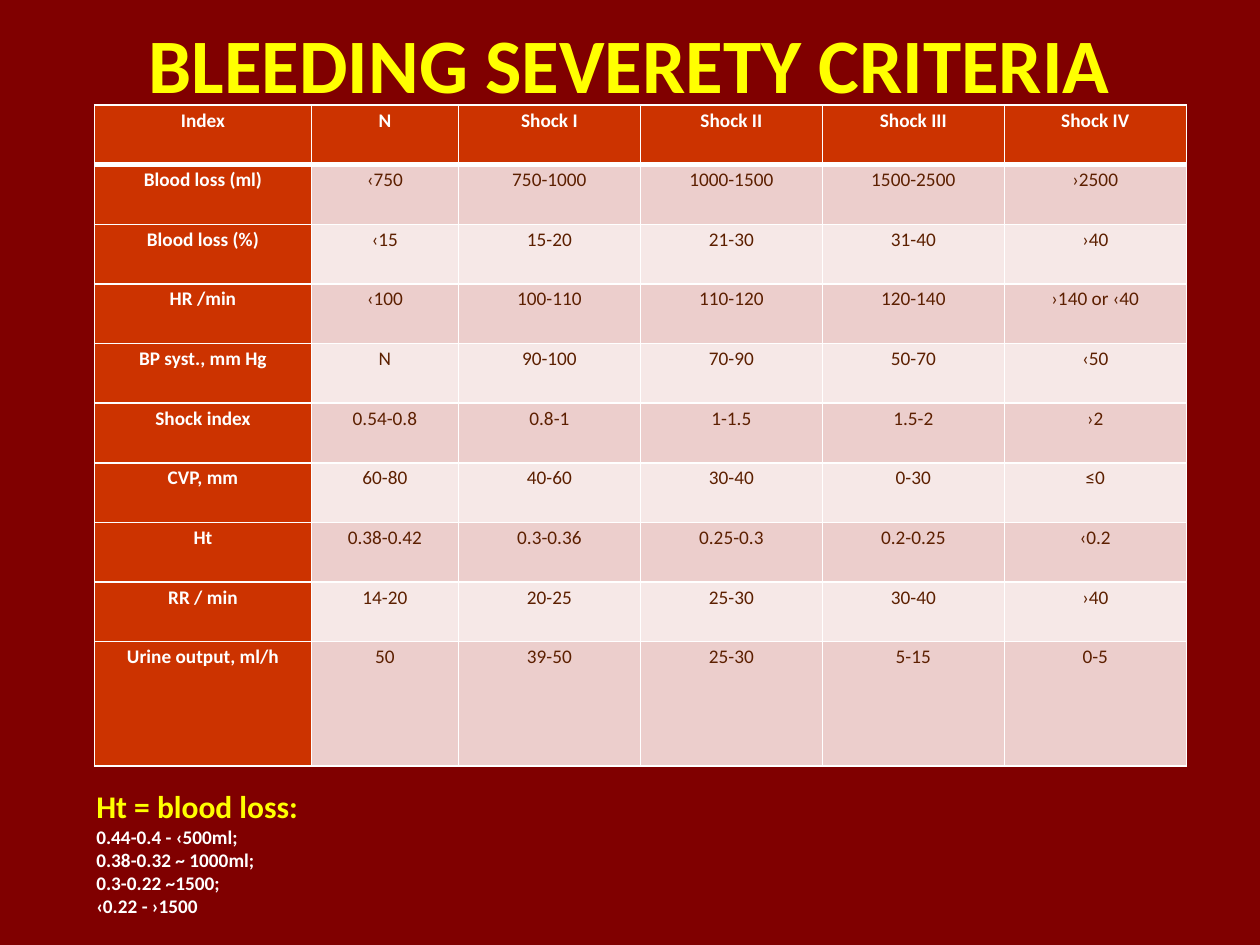
from pptx import Presentation, util as u
from pptx.dml import color
from pptx.enum import text
from pptx.oxml import ns
from lxml import etree

Pt = u.Pt
HEADER = ["Index", "N", "Shock I", "Shock II", "Shock III", "Shock IV"]
CRITERIA = [
    ["Blood loss (ml)", "‹750", "750-1000", "1000-1500", "1500-2500", "›2500"],
    ["Blood loss (%)", "‹15", "15-20", "21-30", "31-40", "›40"],
    ["HR /min", "‹100", "100-110", "110-120", "120-140", "›140 or ‹40"],
    ["BP syst., mm Hg", "N", "90-100", "70-90", "50-70", "‹50"],
    ["Shock index", "0.54-0.8", "0.8-1", "1-1.5", "1.5-2", "›2"],
    ["CVP, mm", "60-80", "40-60", "30-40", "0-30", "≤0"],
    ["Ht", "0.38-0.42", "0.3-0.36", "0.25-0.3", "0.2-0.25", "‹0.2"],
    ["RR / min", "14-20", "20-25", "25-30", "30-40", "›40"],
    ["Urine output, ml/h", "50", "39-50", "25-30", "5-15", "0-5"],
]
COLUMN_WIDTHS = [124, 84] + [104] * 4
ROW_HEIGHTS = [34.1] * 9 + [71]
HEMATOCRIT = ["Ht = blood loss:", "0.44-0.4 - ‹500ml;", "0.38-0.32 ~ 1000ml;",
              "0.3-0.22 ~1500;", "‹0.22 - ›1500"]


def rgb(value):
    return color.RGBColor.from_string(value)


class Painter:
    font = "Calibri"
    background, accent, white = "800000", "FFFF00", "FFFFFF"
    label_fill, ink = "CC3300", "5C1F00"
    bands = ["ECCECC", "F6E8E7"]

    def __init__(self, page):
        self.page = page
        fill = page.background.fill
        fill.solid()
        fill.fore_color.rgb = rgb(self.background)

    def style(self, para, size, ink, bold=True):
        for span in para.runs:
            span.font.name = self.font
            span.font.size = Pt(size)
            span.font.bold = bold
            span.font.color.rgb = rgb(ink)

    def title(self, words, left, top, width, height):
        box = self.page.shapes.title
        box.left, box.top, box.width, box.height = map(Pt, (left, top, width, height))
        frame = box.text_frame
        frame.text = words
        frame.auto_size = text.MSO_AUTO_SIZE.NONE
        # The heading rises above its box, clear of the table
        frame.vertical_anchor = text.MSO_ANCHOR.BOTTOM
        frame.margin_top, frame.margin_bottom = 0, Pt(19)
        frame.paragraphs[0].alignment = text.PP_ALIGN.CENTER
        self.style(frame.paragraphs[0], 44, self.accent)

    def borders(self, cell, top=1, bottom=1):
        properties = cell._tc.get_or_add_tcPr()
        for side, width in (("L", 1), ("R", 1), ("T", top), ("B", bottom)):
            line = etree.SubElement(properties, ns.qn("a:ln" + side), w=str(Pt(width)))
            fill = etree.SubElement(line, ns.qn("a:solidFill"))
            etree.SubElement(fill, ns.qn("a:srgbClr"), val=self.white)

    def cell(self, cell, words, fill, ink, bold):
        cell.margin_left = cell.margin_right = Pt(5)
        cell.margin_top = cell.margin_bottom = 0
        cell.fill.solid()
        cell.fill.fore_color.rgb = rgb(fill)
        cell.text_frame.text = words
        para = cell.text_frame.paragraphs[0]
        para.alignment = text.PP_ALIGN.CENTER
        para.line_spacing = 1.15
        self.style(para, 11, ink, bold)

    def table(self, rows, left, top, widths, heights):
        table = self.page.shapes.add_table(
            len(rows), len(widths), Pt(left), Pt(top),
            Pt(sum(widths)), Pt(sum(heights))).table
        for column, width in zip(table.columns, widths):
            column.width = Pt(width)
        for row, height in zip(table.rows, heights):
            row.height = Pt(height)
        for r, row in enumerate(rows):
            for c, words in enumerate(row):
                cell = table.cell(r, c)
                label = r == 0 or c == 0
                # A heavier rule separates the header row
                self.borders(cell, 3 if r == 1 else 1, 3 if r == 0 else 1)
                self.cell(cell, words,
                          self.label_fill if label else self.bands[(r - 1) % 2],
                          self.white if label else self.ink, label)

    def note(self, lines, left, top, width, height):
        box = self.page.shapes.add_textbox(*map(Pt, (left, top, width, height)))
        frame = box.text_frame
        frame.word_wrap = True
        frame.auto_size = text.MSO_AUTO_SIZE.SHAPE_TO_FIT_TEXT
        frame.vertical_anchor = text.MSO_ANCHOR.MIDDLE
        frame.text = "\n".join(lines)
        heading, *details = frame.paragraphs
        self.style(heading, 18, self.accent)
        for para in details:
            self.style(para, 11, self.white)


def main():
    deck = Presentation()
    deck.slide_width, deck.slide_height = Pt(720), Pt(540)
    painter = Painter(deck.slides.add_slide(deck.slide_layouts[5]))

    # Heading
    painter.title("BLEEDING SEVERETY CRITERIA", 36, 36, 648, 45)
    # Criteria by degree of shock
    painter.table([HEADER] + CRITERIA, 54, 60, COLUMN_WIDTHS, ROW_HEIGHTS)
    # Hematocrit against blood loss
    painter.note(HEMATOCRIT, 48, 446, 138, 82)

    deck.save("out.pptx")


if __name__ == "__main__":
    main()
